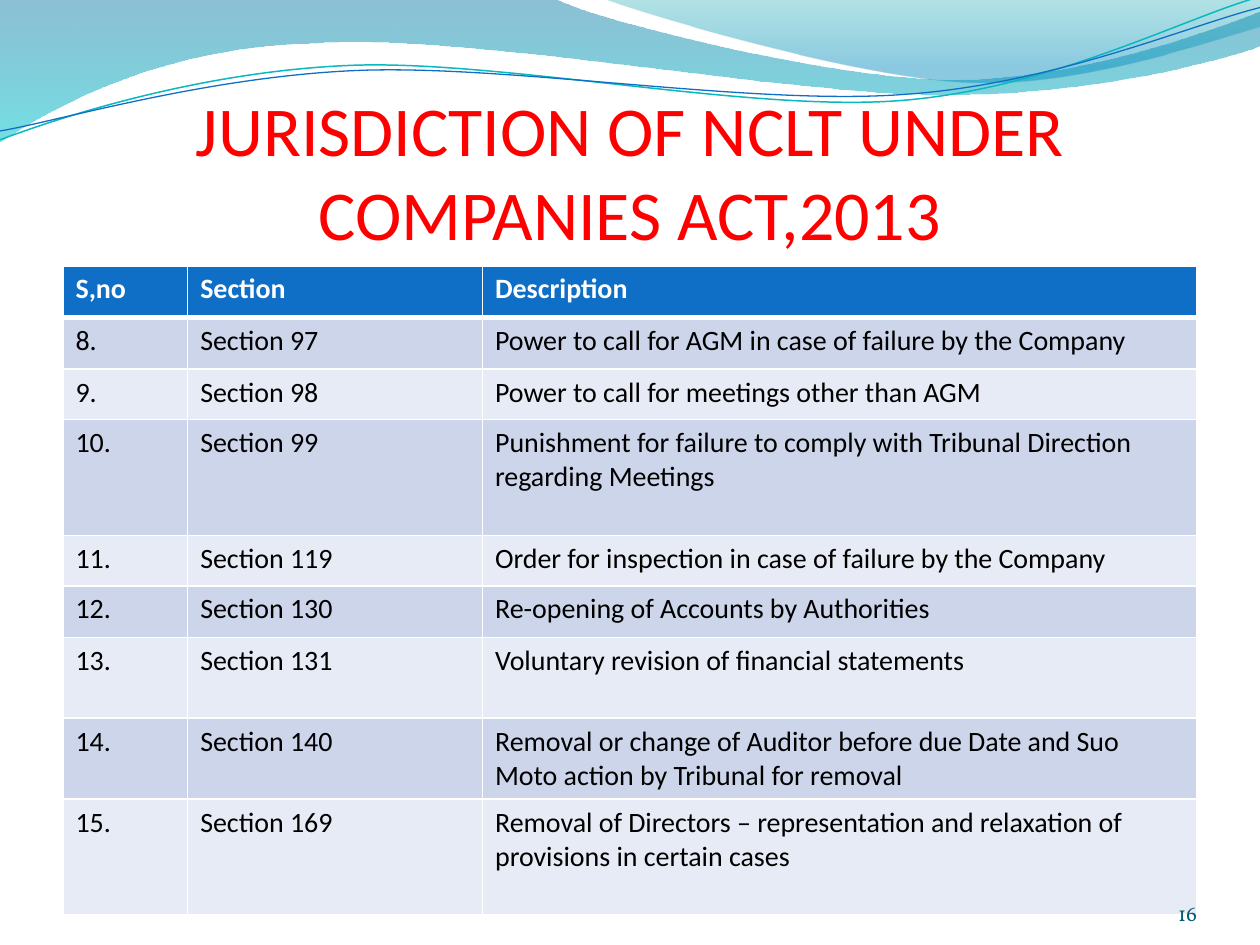
"""Build the NCLT jurisdiction slide: wave header, title and table of sections."""
from lxml import etree
from pptx import Presentation
from pptx.dml.color import RGBColor
from pptx.enum.text import MSO_ANCHOR, MSO_AUTO_SIZE, PP_ALIGN
from pptx.oxml.ns import qn
from pptx.util import Inches, Pt

CENTER, RIGHT = PP_ALIGN.CENTER, PP_ALIGN.RIGHT
BOTTOM = MSO_ANCHOR.BOTTOM
NO_AUTOFIT = MSO_AUTO_SIZE.NONE

WHITE = RGBColor(0xFF, 0xFF, 0xFF)
BLACK = RGBColor(0x00, 0x00, 0x00)
RED = RGBColor(0xFF, 0x00, 0x00)
BLUE = RGBColor(0x0F, 0x6F, 0xC6)
TEAL = RGBColor(0x0A, 0xB8, 0xBF)
DARK_TEAL = RGBColor(0x04, 0x5D, 0x75)
BAND_DARK = RGBColor(0xCC, 0xD5, 0xEA)
BAND_LIGHT = RGBColor(0xE7, 0xEB, 0xF5)
WAVE_TOP = RGBColor(0x00, 0x74, 0xA1)
WAVE_BOTTOM = RGBColor(0x00, 0xC6, 0xCF)
CREST_TOP = RGBColor(0x00, 0xA1, 0xA9)
CREST_BOTTOM = RGBColor(0x00, 0x8B, 0xBF)

MARGIN = 0.5
CONTENT_WIDTH = 9
COLUMN_WIDTHS = (0.99, 2.34, 5.67)
ROW_HEIGHTS = (0.41, 0.41, 0.4, 0.92, 0.4, 0.41, 0.64, 0.64, 0.92)
ROWS = (
    ("S,no", "Section", "Description"),
    ("8.", "Section 97", "Power to call for AGM in case of failure by the Company"),
    ("9.", "Section 98", "Power to call for meetings other than AGM"),
    ("10.", "Section 99", "Punishment for failure to comply with Tribunal Direction regarding Meetings"),
    ("11.", "Section 119", "Order for inspection in case of failure by the Company"),
    ("12.", "Section 130", "Re-opening of Accounts by Authorities"),
    ("13.", "Section 131", "Voluntary revision of financial statements"),
    ("14.", "Section 140", "Removal or change of Auditor before due Date and Suo Moto action by Tribunal for removal"),
    ("15.", "Section 169", "Removal of Directors – representation and relaxation of provisions in certain cases"),
)

WAVE = ((0, 0), (4.4, -0.01), (4.76, 0.17, 6.64, 0.63, 7.58, 0.63),
        (8.53, 0.63, 9.58, 0.26, 10, 0.09), (10.01, 0.36),
        (9.83, 0.44, 8.7, 0.76, 7.46, 0.75), (6.22, 0.75, 3.82, 0.28, 2.57, 0.34),
        (1.29, 0.36, 0.46, 0.83, -0.01, 1.13), (0, 0))
CREST = ((4.79, -0.01), (5.09, 0.11, 6.82, 0.62, 7.69, 0.65),
         (8.56, 0.69, 9.61, 0.32, 10, 0.21), (10, 0), (4.79, -0.01))
TEAL_LINE = ((0, 1.11), (0.48, 0.93, 1.58, 0.57, 2.77, 0.52),
             (3.95, 0.47, 5.93, 0.89, 7.13, 0.8), (8.33, 0.71, 9.38, 0.15, 9.98, -0.02))
BLUE_LINE = ((0, 1.04), (0.47, 0.96, 1.64, 0.61, 2.83, 0.56),
             (4.03, 0.51, 5.97, 0.84, 7.17, 0.75), (8.36, 0.67, 9.41, 0.21, 10, 0.06))


def bend_segment(segment, curve, shape):
    """Turn a straight segment into a cubic curve, given in inches on the slide."""
    segment.tag = qn("a:cubicBezTo")
    for point in list(segment):
        segment.remove(point)
    for x, y in zip(curve[::2], curve[1::2]):
        etree.SubElement(segment, qn("a:pt"), x=str(Inches(x) - shape.left), y=str(Inches(y) - shape.top))


def add_outline(slide, outline, close):
    """Add a freeform without shadow that follows points and cubic curves."""
    corners = [(Inches(part[-2]), Inches(part[-1])) for part in outline]
    builder = slide.shapes.build_freeform(*corners[0])
    builder.add_line_segments(corners[1:], close=close)
    shape = builder.convert_to_shape()
    shape.shadow.inherit = False
    segments = list(shape._element.iter(qn("a:lnTo")))
    for segment, part in zip(segments, outline[1:]):
        if len(part) == 6:
            bend_segment(segment, part, shape)
    return shape


def add_wave(slide, outline, stops):
    """Add a closed wave with a see-through gradient from top to bottom."""
    shape = add_outline(slide, outline, True)
    shape.line.fill.background()
    shape.fill.gradient()
    shape.fill.gradient_angle = 270
    for stop, (position, color, _) in zip(shape.fill.gradient_stops, stops):
        stop.color.rgb = color
        stop.position = position
    for node, (_, _, opacity) in zip(shape._element.iter(qn("a:srgbClr")), stops):
        etree.SubElement(node, qn("a:alpha")).set("val", str(opacity * 1000))


def add_wave_line(slide, outline, color, width):
    """Add an open curved line."""
    shape = add_outline(slide, outline, False)
    shape.fill.background()
    shape.line.color.rgb = color
    shape.line.width = Pt(width)


def format_text(text_frame, font_name, size, color, alignment=None, bold=False):
    """Format the first paragraph of a text frame and its runs."""
    paragraph = text_frame.paragraphs[0]
    paragraph.alignment = alignment
    for run in paragraph.runs:
        run.font.name = font_name
        run.font.size = Pt(size)
        run.font.bold = bold
        run.font.color.rgb = color


def place_text(shape, box, text, top_inset):
    """Place a text shape, anchor it at the bottom and fill in its text."""
    shape.left, shape.top, shape.width, shape.height = map(Inches, box)
    text_frame = shape.text_frame
    text_frame.text = text
    text_frame.word_wrap = True
    text_frame.auto_size = NO_AUTOFIT
    text_frame.vertical_anchor = BOTTOM
    text_frame.margin_left = text_frame.margin_right = text_frame.margin_bottom = 0
    text_frame.margin_top = Inches(top_inset)
    return text_frame


def add_border(cell, side, width):
    """Add a white border to one side of a cell."""
    properties = cell._tc.get_or_add_tcPr()
    line = etree.SubElement(properties, qn(f"a:ln{side}"), w=str(Pt(width)))
    fill = etree.SubElement(line, qn("a:solidFill"))
    etree.SubElement(fill, qn("a:srgbClr"), val=str(WHITE))


def format_cell(cell, row_index):
    """Give a cell its borders, fill and font by its row."""
    header = row_index == 0
    for side in "LRTB":
        under_header = (row_index, side) in ((0, "B"), (1, "T"))
        add_border(cell, side, 3 if under_header else 1)
    cell.fill.solid()
    cell.fill.fore_color.rgb = BLUE if header else (BAND_LIGHT, BAND_DARK)[row_index % 2]
    format_text(cell.text_frame, "Calibri", 16, WHITE if header else BLACK, bold=header)


def add_section_table(slide):
    """Add the table of sections."""
    frame = slide.shapes.add_table(len(ROWS), len(COLUMN_WIDTHS), Inches(MARGIN), Inches(2.11),
                                   Inches(CONTENT_WIDTH), Inches(sum(ROW_HEIGHTS)))
    table = frame.table
    for column, width in zip(table.columns, COLUMN_WIDTHS):
        column.width = Inches(width)
    for row_index, (row, height) in enumerate(zip(table.rows, ROW_HEIGHTS)):
        row.height = Inches(height)
        for cell, text in zip(row.cells, ROWS[row_index]):
            cell.text_frame.text = text
            format_cell(cell, row_index)


def main():
    """Build and save the slide."""
    presentation = Presentation()
    presentation.slide_width, presentation.slide_height = Inches(10), Inches(7.5)
    slide = presentation.slides.add_slide(presentation.slide_layouts[5])

    add_wave(slide, WAVE, ((0, WAVE_TOP, 45), (1, WAVE_BOTTOM, 55)))
    add_wave(slide, CREST, ((0, CREST_TOP, 30), (0.8, CREST_BOTTOM, 45)))
    add_wave_line(slide, TEAL_LINE, TEAL, 0.85)
    add_wave_line(slide, BLUE_LINE, BLUE, 0.75)

    title = slide.shapes.title
    slide.shapes._spTree.append(title._element)
    title_frame = place_text(title, (MARGIN, 0.77, CONTENT_WIDTH, 1.25),
                             "JURISDICTION OF NCLT UNDER COMPANIES ACT,2013", 0.05)
    format_text(title_frame, "Calibri", 40, RED, CENTER)

    add_section_table(slide)

    number = slide.shapes.add_textbox(0, 0, 0, 0)
    number_frame = place_text(number, (8.67, 6.95, 0.83, 0.4), "16", 0)
    format_text(number_frame, "Vollkorn", 12, DARK_TEAL, RIGHT)
    presentation.save("out.pptx")


if __name__ == "__main__":
    main()
